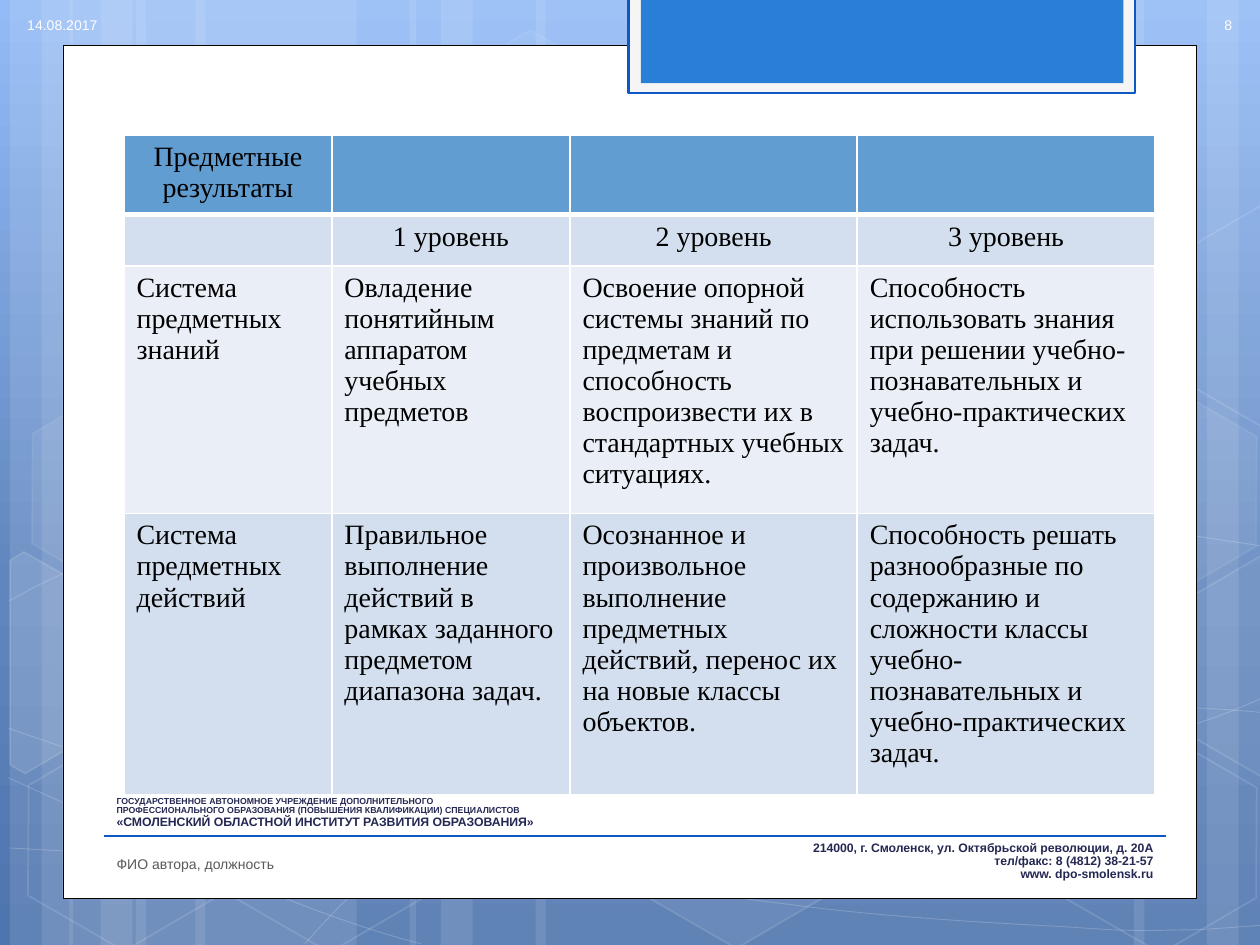
from dataclasses import dataclass

from lxml.etree import SubElement
from pptx import Presentation
from pptx.dml.color import RGBColor
from pptx.enum.shapes import MSO_CONNECTOR, MSO_SHAPE
from pptx.enum.text import MSO_ANCHOR, PP_ALIGN
from pptx.oxml.ns import qn
from pptx.util import Cm, Pt


@dataclass(frozen=True)
class Theme:
    sans: str = "Arial"
    serif: str = "Times New Roman"
    white: str = "FFFFFF"
    black: str = "000000"
    navy: str = "242852"
    blue: str = "0E58C4"
    tab: str = "297FD5"
    tab_frame: str = "F5F5F5"
    grey: str = "595959"
    pale: str = "FEFEFE"
    row_fills: tuple = ("629DD1", "D3DFEE", "EAEFF7", "D3DFEE")
    sky: tuple = ((0, "93BBF6"), (62, "6186BE"), (100, "4F75AE"))
    table_size: float = 16
    label_size: float = 8
    contact_size: float = 7
    small_size: float = 5


@dataclass(frozen=True)
class Box:
    left: float
    top: float
    width: float
    height: float

    def inner(self, left, top, width, height):
        return Box(self.left + left, self.top + top, width, height)

    def lengths(self):
        return Cm(self.left), Cm(self.top), Cm(self.width), Cm(self.height)


THEME = Theme()
GRID = Cm(2.54)  # unit of the curve and polygon points

# Beams: left and width in cm
BEAMS = [(2.74, 4.45), (0.2, 1.27), (0.84, 2.11), (3.94, 4.45), (1.4, 1.27), (2.03, 2.11),
         (18.62, 4.45), (24.33, 1.27), (22.86, 2.11), (10.8, 7.82), (8.26, 1.27), (8.89, 2.11)]

# Curves: a start point, then cubic segments of three points each
CURVES = [
    [(.07, 6.73), (.61, 6.76), (1.15, 6.79), (1.9, 6.78), (2.65, 6.77), (3.58, 6.75), (4.58, 6.65),
     (5.58, 6.55), (7, 6.36), (7.92, 6.17), (8.83, 5.98), (9.77, 5.68), (10.07, 5.51)],
    [(.07, 4.77), (.36, 4.61), (.65, 4.46), (1.21, 4.31), (1.78, 4.16), (2.59, 3.94), (3.47, 3.87),
     (4.36, 3.8), (5.44, 3.79), (6.54, 3.87), (7.64, 3.95), (9.47, 4.26), (10.07, 4.34)],
    [(.06, 6.17), (1.27, 6.72), (2.47, 7.27), (3.34, 7.49)],
    [(.07, 5.78), (.38, 5.89), (.7, 6), (1.28, 6.16), (1.86, 6.31), (2.73, 6.56), (3.57, 6.73),
     (4.4, 6.9), (5.45, 7.08), (6.28, 7.18), (7.11, 7.29), (8, 7.33), (8.53, 7.36),
     (9.05, 7.4), (9.19, 7.38), (9.45, 7.38), (9.71, 7.37), (9.89, 7.35), (10.07, 7.34)],
    [(2.42, 7.49), (2.6, 7.29), (2.78, 7.09), (3.02, 6.91), (3.26, 6.73), (3.6, 6.53), (3.88, 6.39),
     (4.16, 6.25), (4.33, 6.19), (4.7, 6.09), (5.06, 5.99), (5.73, 5.85), (6.08, 5.78),
     (6.44, 5.71), (6.49, 5.71), (6.8, 5.69), (7.11, 5.66), (7.6, 5.63), (7.94, 5.62),
     (8.29, 5.61), (8.86, 5.62), (8.86, 5.62), (8.86, 5.62), (9.53, 5.62), (9.53, 5.62),
     (9.71, 5.63), (9.88, 5.64), (10.06, 5.66)],
]

# Hexagons: left and top in cm, fill and line opacity in percent
HEXAGONS = [(8.48, 0.91, 4, 8), (12.62, 14.96, 6, 12), (0.28, 15.01, 0, 12), (0.36, 7.92, 7, 8),
            (4.42, 15.04, 0, 12), (19.13, 11.51, 10, 12), (21.18, 15.06, 0, 12), (21.18, 7.98, 7, 8)]

# Hexagons cut by the slide edge: fill opacity and points
CUT_HEXAGONS = [
    (10, [(.08, 4.45), (.19, 4.38), (.96, 4.82), (.95, 5.7), (.2, 6.14), (.08, 6.07)]),
    (4, [(9.26, 4.85), (10.01, 4.41), (10.09, 4.46), (10.09, 6.13), (10.02, 6.17), (9.26, 5.73)]),
    (0, [(9.26, 2.07), (10.01, 1.63), (10.1, 1.68), (10.09, 3.35), (10.02, 3.39), (9.26, 2.95)]),
]

ROWS = [
    ["Предметные результаты", "", "", ""],
    ["", "1 уровень", "2 уровень", "3 уровень"],
    ["Система предметных знаний", "Овладение понятийным аппаратом учебных предметов",
     "Освоение опорной системы знаний по предметам и способность воспроизвести их в стандартных "
     "учебных ситуациях.",
     "Способность использовать знания при решении учебно-познавательных и учебно-практических задач."],
    ["Система предметных действий",
     "Правильное выполнение действий в рамках заданного предметом диапазона задач.",
     "Осознанное и произвольное выполнение предметных действий, перенос их на новые классы объектов.",
     "Способность решать разнообразные по содержанию и сложности классы учебно-познавательных и "
     "учебно-практических задач."],
]
INSTITUTE = [("ГОСУДАРСТВЕННОЕ АВТОНОМНОЕ УЧРЕЖДЕНИЕ ДОПОЛНИТЕЛЬНОГО", THEME.small_size),
             ("ПРОФЕССИОНАЛЬНОГО ОБРАЗОВАНИЯ (ПОВЫШЕНИЯ КВАЛИФИКАЦИИ) СПЕЦИАЛИСТОВ", THEME.small_size),
             ("«СМОЛЕНСКИЙ ОБЛАСТНОЙ ИНСТИТУТ РАЗВИТИЯ ОБРАЗОВАНИЯ»", THEME.contact_size)]
CONTACTS = ["214000, г. Смоленск, ул. Октябрьской революции, д. 20А", "тел/факс: 8 (4812) 38-21-57",
            "www. dpo-smolensk.ru"]


def style_shape(shape, fill=None, opacity=100, line=None, width=1, line_opacity=100):
    shape.shadow.inherit = False
    if fill and opacity:
        shape.fill.solid()
        shape.fill.fore_color.rgb = RGBColor.from_string(fill)
    else:
        shape.fill.background()
    if line:
        shape.line.width = Pt(width)
        shape.line.color.rgb = RGBColor.from_string(line)
    else:
        shape.line.fill.background()
    properties = shape.element.spPr
    for parent, percent in ((properties, opacity), (properties.find(qn("a:ln")), line_opacity)):
        color = parent.find(f"{qn('a:solidFill')}/{qn('a:srgbClr')}")
        if color is not None and percent < 100:
            SubElement(color, qn("a:alpha"), val=str(percent * 1000))


def add_outline(slide, box, points, close):
    scaled = [(round(x * GRID), round(y * GRID)) for x, y in points]
    builder = slide.shapes.build_freeform(*scaled[0], scale=1.0)
    builder.add_line_segments(scaled[1:], close=close)
    return builder.convert_to_shape(Cm(box.left), Cm(box.top))


def add_curve(slide, box, points):
    curve = add_outline(slide, box, points, False)
    outline = next(curve.element.iter(qn("a:path")))
    segments = outline.findall(qn("a:lnTo"))
    # Every three points become one cubic segment
    for first in range(0, len(segments), 3):
        cubic = SubElement(outline, qn("a:cubicBezTo"))
        for segment in segments[first:first + 3]:
            cubic.append(segment[0])
            outline.remove(segment)
    return curve


def format_paragraph(paragraph, font, size, color, align=PP_ALIGN.LEFT, bold=False):
    paragraph.alignment = align
    for run in paragraph.runs:
        run.font.name, run.font.size, run.font.bold = font, Pt(size), bold
        run.font.color.rgb = RGBColor.from_string(color)


def add_text_box(slide, box):
    text_frame = slide.shapes.add_textbox(*box.lengths()).text_frame
    text_frame.word_wrap = True
    text_frame.vertical_anchor = MSO_ANCHOR.MIDDLE
    return text_frame


def add_label(slide, box, text, color, align=PP_ALIGN.LEFT):
    text_frame = add_text_box(slide, box)
    text_frame.text = text
    format_paragraph(text_frame.paragraphs[0], THEME.sans, THEME.label_size, color, align)


def add_backdrop(slide, box):
    # Sky gradient, top to bottom
    fill = slide.background.fill
    fill.gradient()
    fill.gradient_angle = 270
    stops = next(slide.element.iter(qn("a:gsLst")))
    for stop in list(stops):
        stops.remove(stop)
    for position, color in THEME.sky:
        stop = SubElement(stops, qn("a:gs"), pos=str(position * 1000))
        SubElement(stop, qn("a:srgbClr"), val=color)
    # Beams, curves and hexagons
    for left, width in BEAMS:
        beam = slide.shapes.add_shape(MSO_SHAPE.RECTANGLE, *box.inner(left, 0, width, box.height).lengths())
        style_shape(beam, THEME.white, 10)
    for points in CURVES:
        style_shape(add_curve(slide, box, points), line=THEME.white, width=0.5, line_opacity=20)
    for left, top, opacity, line_opacity in HEXAGONS:
        hexagon = slide.shapes.add_shape(MSO_SHAPE.HEXAGON, *box.inner(left, top, 4.44, 3.86).lengths())
        hexagon.adjustments[0], hexagon.adjustments[1] = 0.285, 1.155
        hexagon.rotation = 30
        style_shape(hexagon, THEME.white, opacity, THEME.white, 1, line_opacity)
    for opacity, points in CUT_HEXAGONS:
        style_shape(add_outline(slide, box, points, True), THEME.white, opacity, THEME.white, 1, 12)


def add_panel(slide, box):
    tab = box.inner(11.4, -0.96, 10.21, 1.93)
    for part, fill, line, width in ((box, THEME.white, THEME.black, 0.5),
                                    (tab, THEME.tab_frame, THEME.blue, 1.25),
                                    (tab.inner(0.25, 0, 9.73, 1.73), THEME.tab, None, 0)):
        style_shape(slide.shapes.add_shape(MSO_SHAPE.RECTANGLE, *part.lengths()), fill, 100, line, width)


def add_footer(slide, box):
    text_frame = add_text_box(slide, box)
    lines = [(text, size, PP_ALIGN.LEFT) for text, size in INSTITUTE]
    lines += [(text, THEME.contact_size, PP_ALIGN.RIGHT) for text in CONTACTS]
    text_frame.text = "\n".join(text for text, _, _ in lines)
    for paragraph, (_, size, align) in zip(text_frame.paragraphs, lines):
        format_paragraph(paragraph, THEME.sans, size, THEME.navy, align, True)
        paragraph.line_spacing = 0.9
    text_frame.paragraphs[len(INSTITUTE)].space_before = Pt(7.5)
    # Rule and author
    rule_top = Cm(box.top + 0.94)
    rule = slide.shapes.add_connector(MSO_CONNECTOR.STRAIGHT, Cm(box.left), rule_top,
                                      Cm(box.left + box.width), rule_top)
    rule.element.remove(rule.element.find(qn("p:style")))
    rule.line.color.rgb = RGBColor.from_string(THEME.blue)
    rule.line.width = Pt(1)
    SubElement(rule.element.spPr, qn("a:effectLst"))
    add_label(slide, box.inner(0, 1.19, 9.73, 0.64), "ФИО автора, должность", THEME.grey)


def set_borders(cell, bottom):
    properties = cell._tc.get_or_add_tcPr()
    for index, (side, width) in enumerate((("L", 1), ("R", 1), ("T", 1), ("B", bottom))):
        border = SubElement(properties, qn(f"a:ln{side}"), w=str(Pt(width)))
        SubElement(SubElement(border, qn("a:solidFill")), qn("a:srgbClr"), val=THEME.white)
        properties.insert(index, border)


def add_results_table(slide, box):
    frame = slide.shapes.add_table(len(ROWS), len(ROWS[0]), *box.lengths())
    table = frame.table
    table.first_row = table.horz_banding = False
    for column, width in zip(table.columns, (4.19, 4.8, 5.79, 6)):
        column.width = Cm(width)
    # Minimum heights: the rows grow with their text
    for row, height in zip(table.rows, (0.41, 1.03, 1.03, 5.49)):
        row.height = Cm(height)
    frame.height = Cm(box.height)
    for row_index, row in enumerate(ROWS):
        for column_index, text in enumerate(row):
            cell = table.cell(row_index, column_index)
            cell.fill.solid()
            cell.fill.fore_color.rgb = RGBColor.from_string(THEME.row_fills[row_index])
            set_borders(cell, 3 if row_index == 0 else 1)
            cell.text_frame.text = text
            paragraph = cell.text_frame.paragraphs[0]
            paragraph.font.size = Pt(THEME.table_size)
            body_align = PP_ALIGN.LEFT if column_index else PP_ALIGN.JUSTIFY
            format_paragraph(paragraph, THEME.serif, THEME.table_size, THEME.black,
                             PP_ALIGN.CENTER if row_index < 2 else body_align)


def main():
    presentation = Presentation()
    page = Box(0, 0, 25.4, 19.05)
    presentation.slide_width, presentation.slide_height = Cm(page.width), Cm(page.height)
    slide = presentation.slides.add_slide(presentation.slide_layouts[6])
    add_backdrop(slide, page)
    add_panel(slide, page.inner(1.27, 0.91, 22.86, 17.2))
    add_footer(slide, page.inner(2.1, 15.91, 21.4, 2.01))
    add_results_table(slide, page.inner(2.5, 2.72, 20.78, 13.31))
    # Date and slide number
    add_label(slide, page.inner(0.3, 0.15, 2.21, 0.71), "14.08.2017", THEME.pale)
    add_label(slide, page.inner(23.9, 0.15, 1.19, 0.71), "8", THEME.pale, PP_ALIGN.RIGHT)
    presentation.save("out.pptx")


if __name__ == "__main__":
    main()
